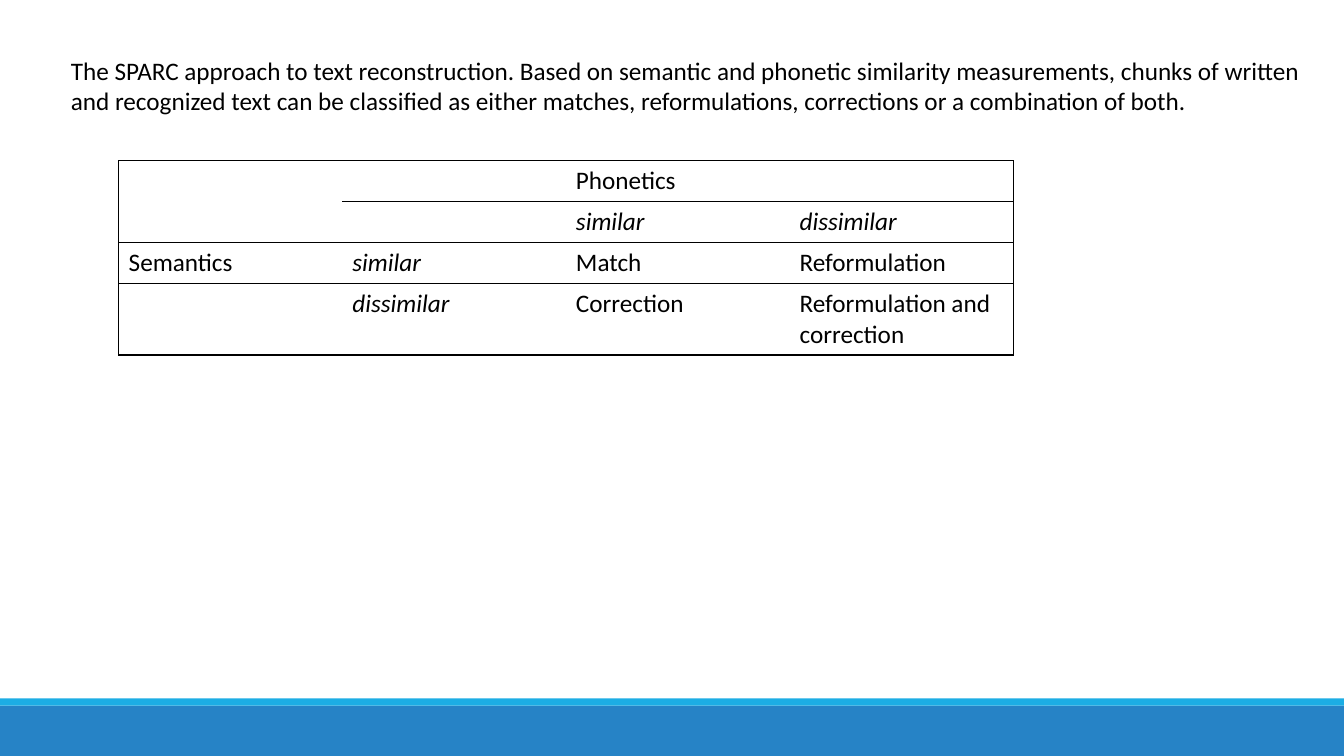
from lxml import etree
from pptx import Presentation
from pptx.dml.color import RGBColor
from pptx.enum.shapes import MSO_SHAPE
from pptx.oxml.ns import qn
from pptx.util import Pt

RECT = MSO_SHAPE.RECTANGLE
PX = 9525
WIDE, HIGH = 1280, 720
COLORS = {"text": "000000", "band": "2683C6", "strip": "1CADE4"}
INTRO = (
    "The SPARC approach to text reconstruction. Based on semantic and phonetic "
    "similarity measurements, chunks of written and recognized text can be "
    "classified as either matches, reformulations, corrections or a combination of both."
)
GRID = [
    ["", "", "Phonetics", ""],
    ["", "", "similar", "dissimilar"],
    ["Semantics", "similar", "Match", "Reformulation"],
    ["", "dissimilar", "Correction", "Reformulation and correction"],
]
COL = 213
ROWS = [39, 39, 39, 68]


def box(*sides):
    """Turn px lengths into EMU."""
    return [side * PX for side in sides]


def write(frame, text, size=18, font="Calibri", color="text", italic=False):
    """Put formatted text into a text frame."""
    frame.word_wrap = True
    run = frame.paragraphs[0].add_run()
    run.text = text
    run.font.size = Pt(size)
    run.font.name = font
    run.font.italic = italic
    run.font.color.rgb = RGBColor.from_string(COLORS[color])


def add_bar(slide, top, high, color):
    """Draw a plain bar across the whole slide."""
    bar = slide.shapes.add_shape(RECT, *box(0, top, WIDE, high))
    bar.shadow.inherit = False
    bar.fill.solid()
    bar.fill.fore_color.rgb = RGBColor.from_string(COLORS[color])
    bar.line.fill.background()


def add_note(slide, text, *place):
    """Add a wrapped text box."""
    write(slide.shapes.add_textbox(*box(*place)).text_frame, text)


def set_edges(cell, shown):
    """Rule the shown sides of a cell and clear the others."""
    props = cell._tc.get_or_add_tcPr()
    for side in "LRTB":
        line = etree.SubElement(props, qn(f"a:ln{side}"), w=str(Pt(1)))
        if side in shown:
            fill = etree.SubElement(line, qn("a:solidFill"))
            etree.SubElement(fill, qn("a:srgbClr"), val=COLORS["text"])
        else:
            etree.SubElement(line, qn("a:noFill"))
    cell.fill.background()


def add_grid(slide, left, top):
    """Add the table of semantic and phonetic similarity."""
    count = len(GRID[0])
    place = box(left, top, COL * count, sum(ROWS))
    table = slide.shapes.add_table(len(GRID), count, *place).table
    table.first_row = table.horz_banding = False
    for col in table.columns:
        col.width = COL * PX
    for r, texts in enumerate(GRID):
        table.rows[r].height = ROWS[r] * PX
        for c, text in enumerate(texts):
            cell = table.cell(r, c)
            if text:
                write(cell.text_frame, text, italic=text.endswith("similar"))
            shown = "TB" + "L" * (c == 0) + "R" * (c == count - 1)
            set_edges(cell, shown)
    table.cell(0, 0).merge(table.cell(1, 0))


def main():
    """Build and save the slide."""
    deck = Presentation()
    deck.slide_width, deck.slide_height = box(WIDE, HIGH)
    slide = deck.slides.add_slide(deck.slide_layouts[6])
    add_bar(slide, 672, 48, "band")
    add_bar(slide, 665, 7, "strip")
    add_grid(slide, 113, 153)
    add_note(slide, INTRO, 58, 48, 1197, 68)
    deck.save("out.pptx")


if __name__ == "__main__":
    main()
